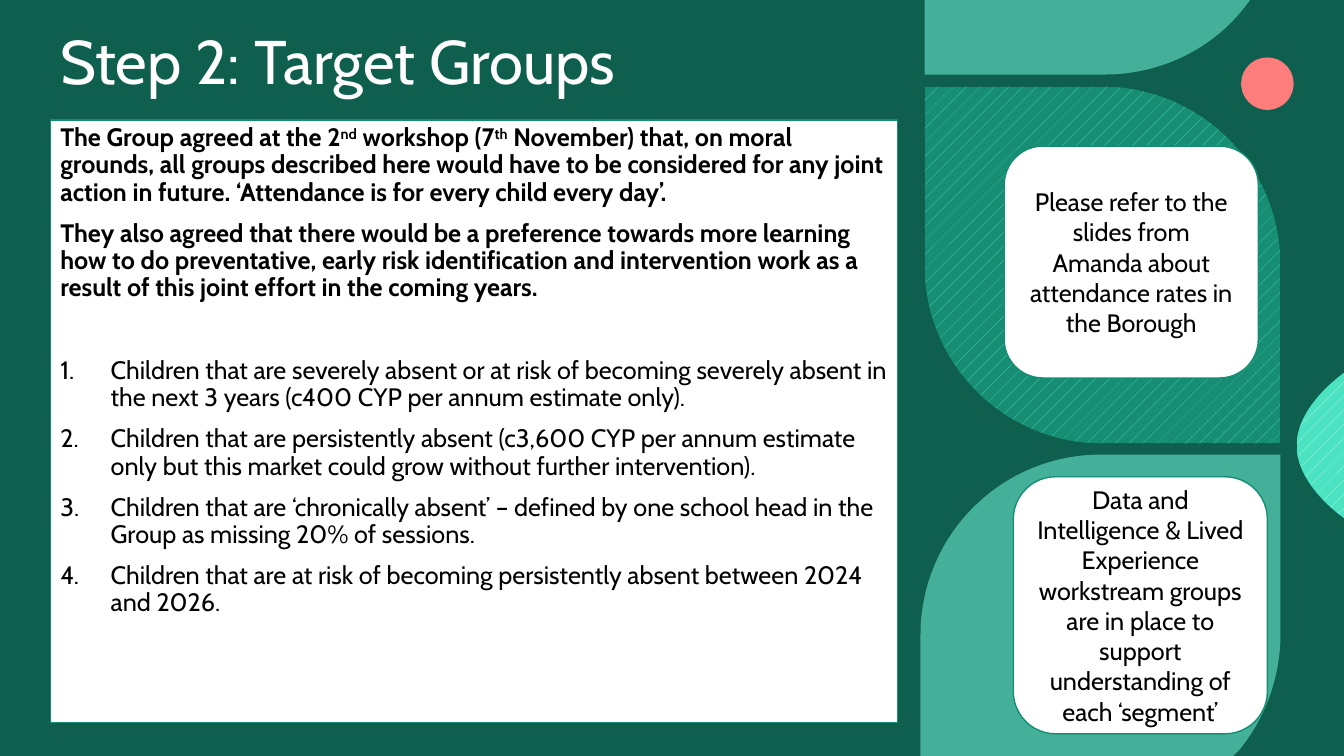
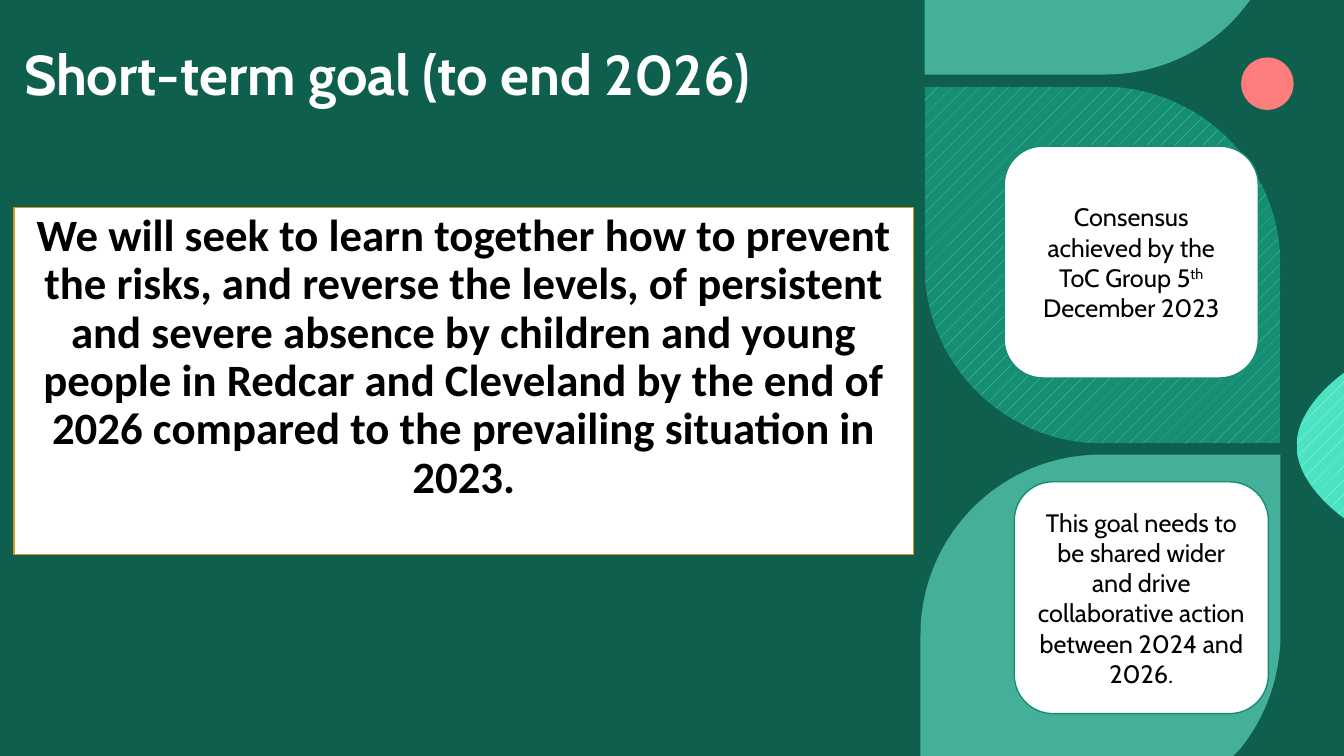
import pptx
import pptx.dml.color
import pptx.enum.dml
import pptx.enum.shapes
import pptx.enum.text
import pptx.oxml
import pptx.oxml.ns
import pptx.util
from pptx.util import Inches
import lxml.etree

COLOURS = {
    "background": "09392F", "veil": "18997E", "leaf": "69E7CC", "deep leaf": "178E74",
    "mint": "4BE3C2", "pale mint": "C3F6EB", "coral": "FD7C7C",
    "white": "FFFFFF", "black": "000000", "green line": "168E74", "gold line": "D39B17",
}
RGB = {name: pptx.dml.color.RGBColor.from_string(code) for name, code in COLOURS.items()}
SHAPE = pptx.enum.shapes.MSO_SHAPE
ALIGN = pptx.enum.text.PP_ALIGN
ANCHOR = pptx.enum.text.MSO_ANCHOR
TAG = pptx.oxml.ns.qn

# Outline steps: two numbers are a corner, six are a Bezier curve from the last point.
TOP_LEAF = [(9.17, 0), (12.4, 0), (12.33, 0.09),
            (12.01, 0.49, 11.51, 0.74, 10.95, 0.74), (9.17, 0.74)]
LOW_LEAF = [(10.92, 4.51), (12.7, 4.51), (12.7, 6.29),
            (12.7, 6.72, 12.55, 7.12, 12.3, 7.43), (12.23, 7.5), (9.13, 7.5),
            (9.13, 6.3), (9.13, 5.31, 9.93, 4.51, 10.92, 4.51)]
LENS = [(13.33, 3.7), (13.33, 5.14), (13.33, 5.14, 12.86, 4.82, 12.86, 4.42),
        (12.86, 4.02, 13.33, 3.7, 13.33, 3.7)]

SLIDES = [
    {
        "title": ("Step 2: Target Groups", (0.5, 0.23, 8.4, 0.79), 44, False),
        "body": {"at": (0.5, 1.19, 8.4, 5.98), "line": "green line",
                 "font": "Cabin", "size": 18, "align": ALIGN.LEFT},
        "statements": [
            "The Group agreed at the 2^nd^ workshop (7^th^ November) that, on moral grounds, "
            "all groups described here would have to be considered for any joint action in "
            "future. ‘Attendance is for every child every day’.",
            "They also agreed that there would be a preference towards more learning how to do "
            "preventative, early risk identification and intervention work as a result of this "
            "joint effort in the coming years.",
        ],
        "numbered": [
            "Children that are severely absent or at risk of becoming severely absent in the "
            "next 3 years (c400 CYP per annum estimate only).",
            "Children that are persistently absent (c3,600 CYP per annum estimate only but this "
            "market could grow without further intervention).",
            "Children that are ‘chronically absent’ – defined by one school head in the Group "
            "as missing 20% of sessions.",
            "Children that are at risk of becoming persistently absent between 2024 and 2026.",
        ],
        "cards": [
            ("Please refer to the slides from Amanda about attendance rates in the Borough",
             (9.96, 1.45, 2.52, 2.3)),
            ("Data and Intelligence & Lived Experience workstream groups are in place to "
             "support understanding of each ‘segment’", (10.05, 4.73, 2.52, 2.55)),
        ],
    },
    {
        "title": ("Short-term goal (to end 2026)", (0.14, 0.38, 8.76, 0.74), 40, True),
        "body": {"at": (0.14, 2.06, 8.92, 3.44), "line": "gold line",
                 "font": "Calibri", "size": 32, "align": ALIGN.CENTER},
        "statements": [
            "We will seek to learn together how to prevent the risks, and reverse the levels, "
            "of persistent and severe absence by children and young people in Redcar and "
            "Cleveland by the end of 2026 compared to the prevailing situation in 2023.",
        ],
        "numbered": [],
        "cards": [
            ("Consensus achieved by the ToC Group 5^th^ December 2023", (9.96, 1.45, 2.52, 2.3)),
            ("This goal needs to be shared wider and drive collaborative action between 2024 "
             "and 2026.", (10.06, 4.78, 2.52, 2.3)),
        ],
    },
]


def paint(shape, fill, line=None, opacity=100, hatch=None):
    """Set fill and line, with an opacity in percent or a hatch colour."""
    shape.shadow.inherit = False
    if hatch:
        shape.fill.patterned()
        shape.fill.pattern = pptx.enum.dml.MSO_PATTERN.PERCENT_5
        shape.fill.fore_color.rgb = RGB[hatch]
        shape.fill.back_color.rgb = RGB[fill]
    else:
        shape.fill.solid()
        shape.fill.fore_color.rgb = RGB[fill]
    if opacity < 100:
        tint = shape._element.spPr.find(TAG("a:solidFill"))[0]
        lxml.etree.SubElement(tint, TAG("a:alpha"), val=str(opacity * 1000))
    if line:
        shape.line.color.rgb = RGB[line]
        shape.line.width = pptx.util.Pt(1)
    else:
        shape.line.fill.background()


def write_para(para, text, size, colour="black", font="Cabin", bold=False,
               align=ALIGN.LEFT, spacing=None, before=0):
    """Fill a paragraph; text between ^ marks is raised."""
    para.alignment = align
    para.line_spacing = spacing
    para.space_before = pptx.util.Pt(before)
    para.font.name = font
    para.font.size = pptx.util.Pt(size)
    para.font.bold = bold
    para.font.color.rgb = RGB[colour]
    for index, part in enumerate(text.split("^")):
        span = para.add_run()
        span.text = part
        if index % 2:
            span._r.get_or_add_rPr().set("baseline", "30000")


deck = pptx.Presentation()
deck.slide_width, deck.slide_height = Inches(13.33), Inches(7.5)

for content in SLIDES:
    page = deck.slides.add_slide(deck.slide_layouts[6])
    page.background.fill.solid()
    page.background.fill.fore_color.rgb = RGB["background"]
    veil = page.shapes.add_shape(SHAPE.RECTANGLE, 0, 0, deck.slide_width, deck.slide_height)
    paint(veil, "veil", opacity=40)

    # Dot and leaves on the right
    dot = page.shapes.add_shape(SHAPE.OVAL, *map(Inches, (12.31, 0.57, 0.52, 0.52)))
    paint(dot, "coral")
    for steps, look in [
        (TOP_LEAF, {"fill": "leaf", "opacity": 60}),
        (LOW_LEAF, {"fill": "leaf", "opacity": 60}),
        (LENS, {"fill": "mint", "hatch": "pale mint"}),
    ]:
        ends = [tuple(map(Inches, step[-2:])) for step in steps]
        builder = page.shapes.build_freeform(*ends[0])
        builder.add_line_segments(ends[1:], close=True)
        leaf = builder.convert_to_shape()
        paint(leaf, **look)
        # Bend the straight segments that stand for curves
        segments = list(leaf._element.iter(TAG("a:lnTo")))
        for segment, step in zip(segments, steps[1:]):
            if len(step) == 6:
                segment.tag = TAG("a:cubicBezTo")
                for position, (x, y) in enumerate((step[:2], step[2:4])):
                    handle = lxml.etree.Element(TAG("a:pt"), x=str(Inches(x) - leaf.left),
                                                y=str(Inches(y) - leaf.top))
                    segment.insert(position, handle)
    deep_leaf = page.shapes.add_shape(SHAPE.ROUND_2_DIAG_RECTANGLE,
                                      *map(Inches, (9.17, 0.86, 3.53, 3.54)))
    deep_leaf.adjustments[0], deep_leaf.adjustments[1] = 0, 0.5
    paint(deep_leaf, "deep leaf", hatch="mint")

    # Title
    text, at, size, bold = content["title"]
    title = page.shapes.add_textbox(*map(Inches, at)).text_frame
    title.word_wrap = True
    title.vertical_anchor = ANCHOR.BOTTOM
    write_para(title.paragraphs[0], text, size, "white", bold=bold, spacing=0.9)

    # Main panel: bold statements, then a numbered list
    body = content["body"]
    panel = page.shapes.add_shape(SHAPE.RECTANGLE, *map(Inches, body["at"]))
    paint(panel, "white", body["line"])
    frame = panel.text_frame
    frame.word_wrap = True
    frame.vertical_anchor = ANCHOR.TOP
    style = {"size": body["size"], "font": body["font"], "align": body["align"], "spacing": 0.9}
    for index, text in enumerate(content["statements"]):
        para = frame.add_paragraph() if index else frame.paragraphs[0]
        write_para(para, text, bold=True, before=10, **style)
    for index, text in enumerate(content["numbered"]):
        para = frame.add_paragraph()
        write_para(para, text, before=10 if index else 39.5, **style)
        properties = para._p.get_or_add_pPr()
        properties.set("marL", str(Inches(0.5)))
        properties.set("indent", str(-Inches(0.5)))
        number = lxml.etree.Element(TAG("a:buAutoNum"), type="arabicPeriod")
        properties.find(TAG("a:defRPr")).addprevious(number)

    # Side cards
    for text, at in content["cards"]:
        card = page.shapes.add_shape(SHAPE.ROUNDED_RECTANGLE, *map(Inches, at))
        paint(card, "white", "green line")
        frame = card.text_frame
        frame.word_wrap = True
        frame.vertical_anchor = ANCHOR.MIDDLE
        write_para(frame.paragraphs[0], text, 18, align=ALIGN.CENTER)

deck.save("out.pptx")
